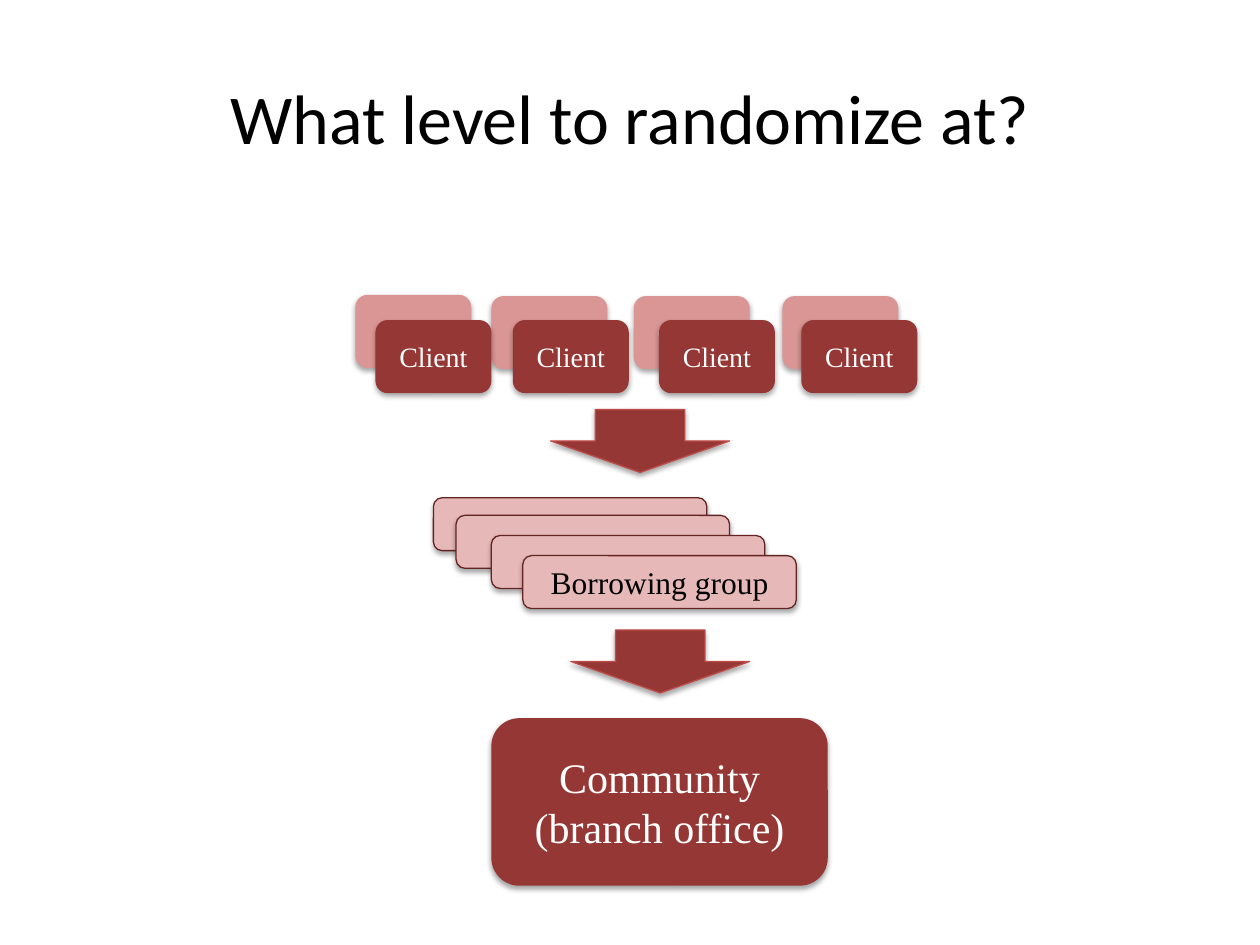
from dataclasses import dataclass

import pptx
import pptx.dml.color
import pptx.enum.shapes
import pptx.enum.text
import pptx.oxml
import pptx.oxml.ns
import pptx.util
from pptx.util import Inches

SHAPE = pptx.enum.shapes.MSO_SHAPE


@dataclass(frozen=True)
class Theme:
    dark: str = "953735"
    medium: str = "D99694"
    light: str = "E6B9B8"
    arrow_line: str = "BF4C48"
    group_line: str = "632523"
    black: str = "000000"
    white: str = "FFFFFF"
    title_font: str = "Calibri"
    body_font: str = "Times New Roman"
    title_size: int = 40
    client_size: int = 16
    group_size: int = 18
    community_size: int = 24
    line_width: float = 0.75


THEME = Theme()


def rgb(value):
    return pptx.dml.color.RGBColor.from_string(value)


def set_text(sp, text, size, color, font=THEME.body_font):
    """Write centred text, one paragraph for each line."""
    tf = sp.text_frame
    tf.word_wrap = True
    tf.vertical_anchor = pptx.enum.text.MSO_ANCHOR.MIDDLE
    for i, line in enumerate(text.split("\n")):
        p = tf.add_paragraph() if i else tf.paragraphs[0]
        p.alignment = pptx.enum.text.PP_ALIGN.CENTER
        r = p.add_run()
        r.text = line
        r.font.name = font
        r.font.size = pptx.util.Pt(size)
        r.font.color.rgb = rgb(color)


def add_shadow(sp):
    """Give the shape a soft shadow straight below it."""
    sp.shadow.inherit = False
    effects = sp.element.spPr.find(pptx.oxml.ns.qn("a:effectLst"))
    effects.append(pptx.oxml.parse_xml(
        f'<a:outerShdw {pptx.oxml.ns.nsdecls("a")} blurRad="{pptx.util.Pt(3.1)}" '
        f'dist="{pptx.util.Pt(1.8)}" dir="5400000" rotWithShape="0">'
        f'<a:srgbClr val="{THEME.black}"><a:alpha val="35000"/></a:srgbClr>'
        '</a:outerShdw>'))


def add_block(s, kind, left, top, width, height, fill, line=None):
    sp = s.shapes.add_shape(kind, Inches(left), Inches(top), Inches(width), Inches(height))
    sp.fill.solid()
    sp.fill.fore_color.rgb = rgb(fill)
    if line:
        sp.line.color.rgb = rgb(line)
        sp.line.width = pptx.util.Pt(THEME.line_width)
    else:
        sp.line.fill.background()
    add_shadow(sp)
    return sp


def add_title(s, left, top, width, height):
    title = s.shapes.title
    title.left, title.top = Inches(left), Inches(top)
    title.width, title.height = Inches(width), Inches(height)
    set_text(title, "What level to randomize at?", THEME.title_size, THEME.black,
             font=THEME.title_font)


def add_clients(s, left, top):
    """Place a back row of clients and a darker front row that overlaps it."""
    rows = [
        (THEME.medium, [(0, 0), (1.08, 0.01), (3.39, 0.01), (2.21, 0.01)]),
        (THEME.dark, [(x, 0.2) for x in (0.16, 1.25, 2.41, 3.54)]),
    ]
    for fill, offsets in rows:
        for dx, dy in offsets:
            sp = add_block(s, SHAPE.ROUNDED_RECTANGLE, left + dx, top + dy, 0.92, 0.58, fill)
            set_text(sp, "Client", THEME.client_size, THEME.white)


def add_arrow(s, left, top):
    add_block(s, SHAPE.DOWN_ARROW, left, top, 1.42, 0.5, THEME.dark, THEME.arrow_line)


def add_groups(s, left, top):
    """Stack the borrowing groups, with the label on the front one."""
    for dx, dy in [(0, 0), (0.18, 0.14), (0.46, 0.3), (0.71, 0.46)]:
        sp = add_block(s, SHAPE.ROUNDED_RECTANGLE, left + dx, top + dy, 2.17, 0.42,
                       THEME.light, THEME.group_line)
    set_text(sp, "Borrowing group", THEME.group_size, THEME.black)


def add_community(s, left, top, width, height):
    sp = add_block(s, SHAPE.ROUNDED_RECTANGLE, left, top, width, height, THEME.dark)
    set_text(sp, "Community\n(branch office)", THEME.community_size, THEME.white)


def main():
    prs = pptx.Presentation()
    prs.slide_width, prs.slide_height = Inches(10), Inches(7.5)
    s = prs.slides.add_slide(prs.slide_layouts.get_by_name("Title Only"))
    add_title(s, 0.5, 0.3, 9, 1.25)
    add_clients(s, 2.82, 2.34)
    add_arrow(s, 4.37, 3.25)
    add_groups(s, 3.44, 3.95)
    add_arrow(s, 4.53, 5)
    add_community(s, 3.9, 5.7, 2.67, 1.33)
    prs.save("out.pptx")


if __name__ == "__main__":
    main()
